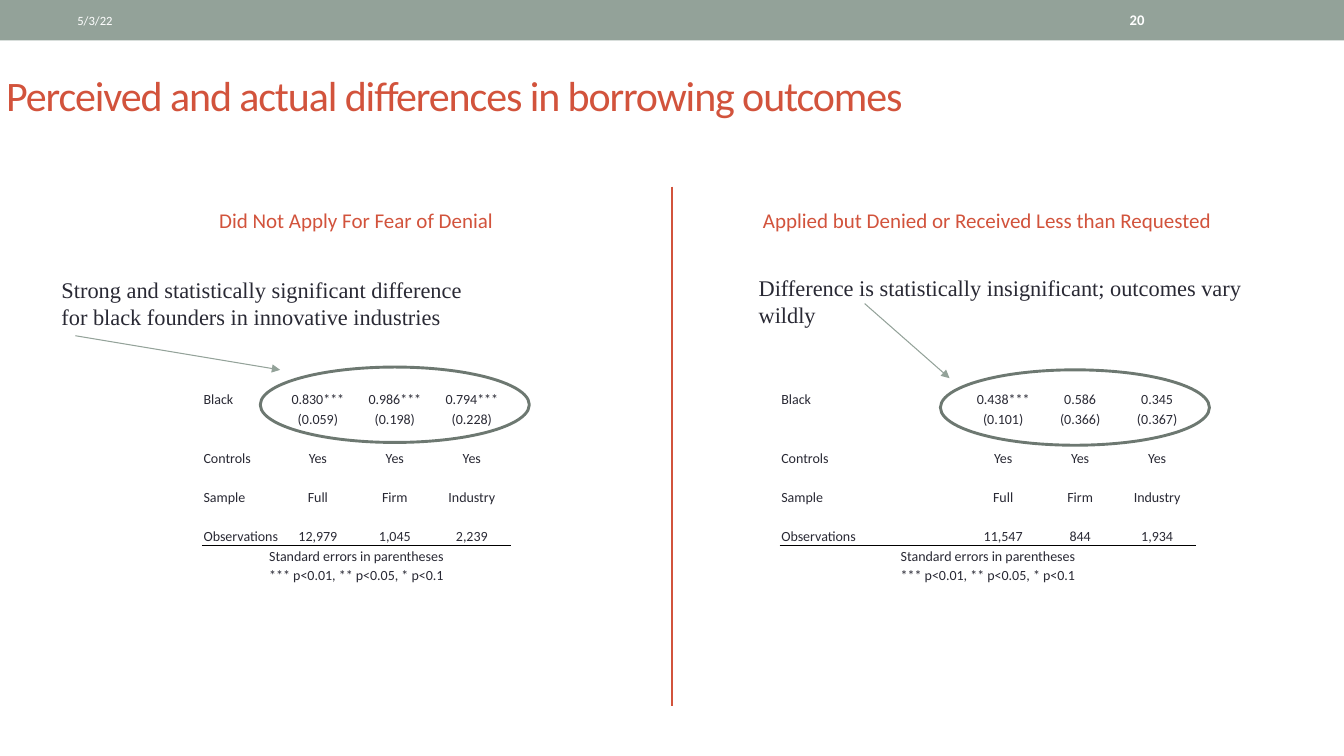
from lxml import etree
from pptx import Presentation
from pptx.dml.color import RGBColor
from pptx.enum.shapes import MSO_CONNECTOR, MSO_SHAPE
from pptx.enum.text import MSO_ANCHOR, PP_ALIGN
from pptx.oxml.ns import qn
from pptx.util import Cm, Pt

LEFT, CENTER = PP_ALIGN.LEFT, PP_ALIGN.CENTER
TOP, MIDDLE, BOTTOM = MSO_ANCHOR.TOP, MSO_ANCHOR.MIDDLE, MSO_ANCHOR.BOTTOM
RECTANGLE, OVAL = MSO_SHAPE.RECTANGLE, MSO_SHAPE.OVAL
STRAIGHT = MSO_CONNECTOR.STRAIGHT

RED, SAGE, DARK_SAGE = "D2533C", "93A299", "6D7871"
INK, WHITE, BLACK = "292934", "FFFFFF", "000000"
SANS, SERIF = "Calibri", "Times New Roman"

COLUMN = 1.94
OBSERVATIONS_ROW = 7
NOTES = ["Standard errors in parentheses", "*** p<0.01, ** p<0.05, * p<0.1"]


def rgb(color):
    return RGBColor.from_string(color)


def write(tf, text, size=10, color=INK, font=SANS, bold=False, align=LEFT, spacing=None):
    for i, line in enumerate(text.split("\n")):
        p = tf.paragraphs[0] if i == 0 else tf.add_paragraph()
        p.alignment = align
        if not line:
            p._p.get_or_add_endParaRPr().set("sz", str(size * 100))
            continue
        r = p.add_run()
        r.text = line
        r.font.size, r.font.name, r.font.bold = Pt(size), font, bold
        r.font.color.rgb = rgb(color)
        if spacing is not None:
            r._r.get_or_add_rPr().set("spc", str(spacing))


def add_text(s, box, text, anchor=MIDDLE, wrap=True, **style):
    sp = s.shapes.add_textbox(*map(Cm, box))
    tf = sp.text_frame
    tf.word_wrap, tf.vertical_anchor = wrap, anchor
    write(tf, text, **style)


def add_shape(s, kind, box, fill=None, line=None, width=1):
    sp = s.shapes.add_shape(kind, *map(Cm, box))
    sp.shadow.inherit = False
    if fill:
        sp.fill.solid()
        sp.fill.fore_color.rgb = rgb(fill)
    else:
        sp.fill.background()
    if line:
        sp.line.color.rgb = rgb(line)
        sp.line.width = Pt(width)
    else:
        sp.line.fill.background()


def add_line(s, start, end, color, width, arrow=False):
    cx = s.shapes.add_connector(STRAIGHT, *map(Cm, start + end))
    cx.line.color.rgb = rgb(color)
    cx.line.width = Pt(width)
    if arrow:
        etree.SubElement(cx.line._get_or_add_ln(), qn("a:tailEnd"), type="triangle")
    etree.SubElement(cx._element.spPr, qn("a:effectLst"))


def add_border(cell, side):
    ln = etree.Element(qn("a:" + side), w=str(Pt(0.5)))
    fill = etree.SubElement(ln, qn("a:solidFill"))
    etree.SubElement(fill, qn("a:srgbClr"), val=BLACK)
    cell._tc.get_or_add_tcPr().insert(0, ln)


def add_regression(s, left, label_width, coefficients, errors, observations):
    blank = [""] * 4
    rows = [
        ["Black", *coefficients],
        ["", *errors],
        blank,
        ["Controls", "Yes", "Yes", "Yes"],
        blank,
        ["Sample", "Full", "Firm", "Industry"],
        blank,
        ["Observations", *observations],
        *([note, "", "", ""] for note in NOTES),
    ]
    widths = [label_width] + [COLUMN] * 3
    table = s.shapes.add_table(len(rows), 4, Cm(left), Cm(9.8), Cm(sum(widths)), Cm(4.93)).table
    table.first_row = table.horz_banding = False
    for column, width in zip(table.columns, widths):
        column.width = Cm(width)
    for i, row in enumerate(rows):
        is_note = i > OBSERVATIONS_ROW
        for j, text in enumerate(row):
            cell = table.cell(i, j)
            cell.margin_left = cell.margin_right = cell.margin_top = Cm(0.03)
            cell.margin_bottom = 0
            cell.vertical_anchor = BOTTOM
            cell.fill.background()
            write(cell.text_frame, text, align=CENTER if j or is_note else LEFT)
            if i == OBSERVATIONS_ROW:
                add_border(cell, "lnB")
            elif i == OBSERVATIONS_ROW + 1:
                add_border(cell, "lnT")
        if is_note:
            table.cell(i, 0).merge(table.cell(i, 3))


def add_title(s, text):
    title = s.shapes.title
    title.left, title.top, title.width, title.height = map(Cm, (-0.1, 1.02, 33.97, 2.74))
    title.text_frame.vertical_anchor = MIDDLE
    write(title.text_frame, text, size=30, color=RED, spacing=-80)


def main():
    prs = Presentation()
    prs.slide_width, prs.slide_height = Cm(33.87), Cm(19.05)
    s = prs.slides.add_slide(prs.slide_layouts[5])

    add_shape(s, RECTANGLE, (0, 0, 33.87, 1.02), fill=SAGE)
    add_line(s, (16.93, 4.7), (16.93, 17.78), RED, 1.5)
    add_title(s, "Perceived and actual differences in borrowing outcomes")
    add_text(s, (1.7, 0.05, 10.72, 0.91), "5/3/22", size=9, color=WHITE)
    add_text(s, (28.22, 0.05, 3.96, 0.91), "20", size=10.5, color=WHITE, bold=True)

    headings = [
        (1.7, "Did Not Apply For Fear of Denial"),
        (17.6, "Applied but Denied or Received Less than Requested"),
    ]
    for left, text in headings:
        add_text(s, (left, 4.65, 14.55, 1.78), text, size=15, color=RED, align=CENTER)

    add_regression(s, 5.1, COLUMN, ["0.830***", "0.986***", "0.794***"],
                   ["(0.059)", "(0.198)", "(0.228)"], ["12,979", "1,045", "2,239"])
    add_regression(s, 19.66, 4.65, ["0.438***", "0.586", "0.345"],
                   ["(0.101)", "(0.366)", "(0.367)"], ["11,547", "844", "1,934"])

    for left, top in [(6.56, 9.25), (23.7, 9.32)]:
        add_shape(s, OVAL, (left, top, 6.78, 1.9), line=DARK_SAGE, width=2.08)

    remarks = [
        ((1.3, 6.83, 10.77, 1.63),
         "Strong and statistically significant difference\n"
         "for black founders in innovative industries"),
        ((18.87, 6.78, 12.88, 1.63),
         "Difference is statistically insignificant; outcomes vary\nwildly"),
    ]
    for box, text in remarks:
        add_text(s, box, text, anchor=TOP, wrap=False, size=16, font=SERIF)

    for start, end in [((1.9, 8.46), (7.06, 9.32)), ((21.79, 7.65), (23.93, 9.53))]:
        add_line(s, start, end, SAGE, 0.75, arrow=True)

    prs.save("out.pptx")


if __name__ == "__main__":
    main()
